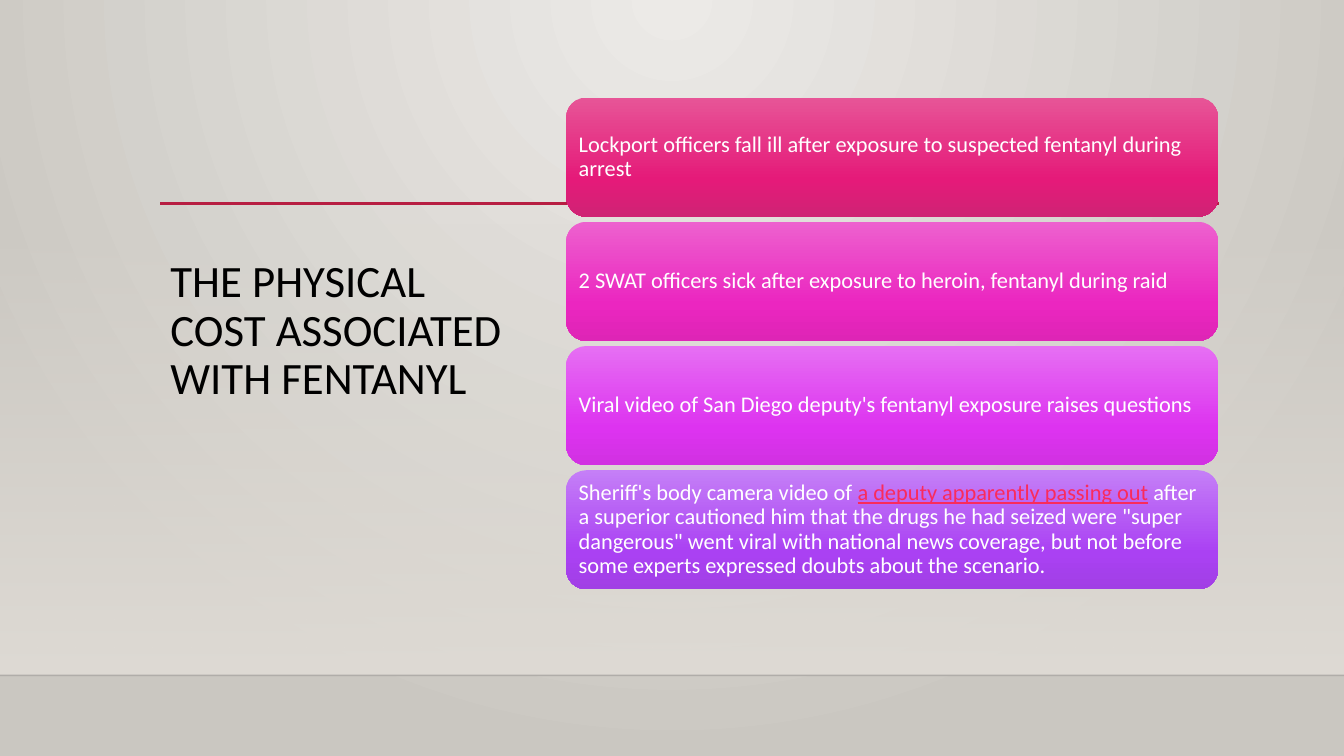
"""Builds the slide on the physical cost associated with fentanyl."""
from pptx import Presentation
from pptx.dml.color import RGBColor
from pptx.enum.shapes import MSO_CONNECTOR as Connector, MSO_SHAPE as Shape
from pptx.enum.text import MSO_ANCHOR as Anchor, MSO_AUTO_SIZE as AutoSize, PP_ALIGN as Align
from pptx.oxml import parse_xml
from pptx.oxml.ns import nsdecls
from pptx.util import Cm, Pt

COLORS = {
    "glow": "ECEAE7", "edge": "CAC7C1", "wall": "DFDBD5",
    "floor line": "000001", "rule": "B71E42",
    "title": "000000", "card text": "FFFFFF", "link": "FA2B5C",
}
DOWNWARD = '<a:lin ang="5400000" scaled="0"/>'
FROM_TOP = '<a:path path="circle"><a:fillToRect l="43000" t="0" r="43000" b="100000"/></a:path>'


def write(paragraph, text, size=16, color="card text", underline=None):
    paragraph.alignment = Align.LEFT
    paragraph.line_spacing = 0.9
    run = paragraph.add_run()
    run.text = text
    run.font.name = "Calibri"
    run.font.size = Pt(size)
    run.font.color.rgb = RGBColor.from_string(COLORS[color])
    run.font.underline = underline


def apply_gradient(owner, stops, direction):
    owner.fill.solid() if hasattr(owner, "fill") else owner.background.fill.solid()
    solid = owner.element.xpath(".//a:solidFill")[0]
    marks = "".join(
        f'<a:gs pos="{place * 1000}"><a:srgbClr val="{color}">'
        f'<a:alpha val="{opacity * 1000}"/></a:srgbClr></a:gs>'
        for place, color, opacity in stops)
    solid.getparent().replace(solid, parse_xml(
        f'<a:gradFill {nsdecls("a")} rotWithShape="1"><a:gsLst>{marks}</a:gsLst>{direction}</a:gradFill>'))


deck = Presentation()
deck.slide_width, deck.slide_height = Cm(33.87), Cm(19.05)
slide = deck.slides.add_slide(deck.slide_layouts[5])
apply_gradient(slide, [(0, COLORS["glow"], 100), (100, COLORS["edge"], 100)], FROM_TOP)

wall = slide.shapes.add_shape(Shape.RECTANGLE, 0, Cm(5.61), deck.slide_width, Cm(11.41))
wall.shadow.inherit = False
wall.line.fill.background()
apply_gradient(wall, [(0, COLORS["wall"], 0), (100, COLORS["wall"], 100)], DOWNWARD)

for color, start, end, height, width, opacity in [
    ("floor line", 0, 33.87, 17.02, 1, 20),
    ("rule", 4.04, 30.73, 5.13, 2.5, 100),
]:
    line = slide.shapes.add_connector(Connector.STRAIGHT, Cm(start), Cm(height), Cm(end), Cm(height))
    line.line.width = Pt(width)
    line.line.color.rgb = RGBColor.from_string(COLORS[color])
    line.element.xpath(".//a:ln//a:srgbClr")[0].append(
        parse_xml(f'<a:alpha {nsdecls("a")} val="{opacity * 1000}"/>'))
    line.element.spPr.append(parse_xml(f'<a:effectLst {nsdecls("a")}/>'))

title = slide.shapes.title
slide.shapes.element.append(title.element)
title.left, title.top, title.width, title.height = Cm(4.04), Cm(6.4), Cm(9.09), Cm(7.42)
title.text_frame.word_wrap = True
title.text_frame.auto_size = AutoSize.NONE
title.text_frame.vertical_anchor = Anchor.TOP
write(title.text_frame.paragraphs[0], "THE PHYSICAL COST ASSOCIATED WITH FENTANYL", size=32, color="title")

cards = [
    (("E75597", "E51A79", "CF2374"),
     ["Lockport officers fall ill after exposure to suspected fentanyl during arrest"]),
    (("ED61CE", "EB26C0", "DE25B6"),
     ["2 SWAT officers sick after exposure to heroin, fentanyl during raid"]),
    (("E66FF3", "DD33F0", "D131E2"),
     ["Viral video of San Diego deputy's fentanyl exposure raises questions"]),
    (("C57FF7", "AA41F3", "A13FE5"),
     ["Sheriff's body camera video of ",
      "a deputy apparently passing out",
      " after a superior cautioned him that the drugs he had seized were \"super dangerous\" "
      "went viral with national news coverage, but not before some experts expressed doubts "
      "about the scenario."]),
]
for row, (shades, phrases) in enumerate(cards):
    card = slide.shapes.add_shape(
        Shape.ROUNDED_RECTANGLE, Cm(14.27), Cm(2.46 + 3.13 * row), Cm(16.43), Cm(3))
    card.shadow.inherit = False
    card.line.fill.background()
    apply_gradient(card, zip((0, 69, 100), shades, (100, 100, 100)), DOWNWARD)
    frame = card.text_frame
    frame.word_wrap = True
    frame.vertical_anchor = Anchor.MIDDLE
    frame.margin_left = frame.margin_right = Cm(0.17)
    frame.margin_top = frame.margin_bottom = Cm(0.17)
    for position, phrase in enumerate(phrases):
        linked = position == 1
        write(frame.paragraphs[0], phrase, color="link" if linked else "card text",
              underline=True if linked else None)

deck.save("out.pptx")
